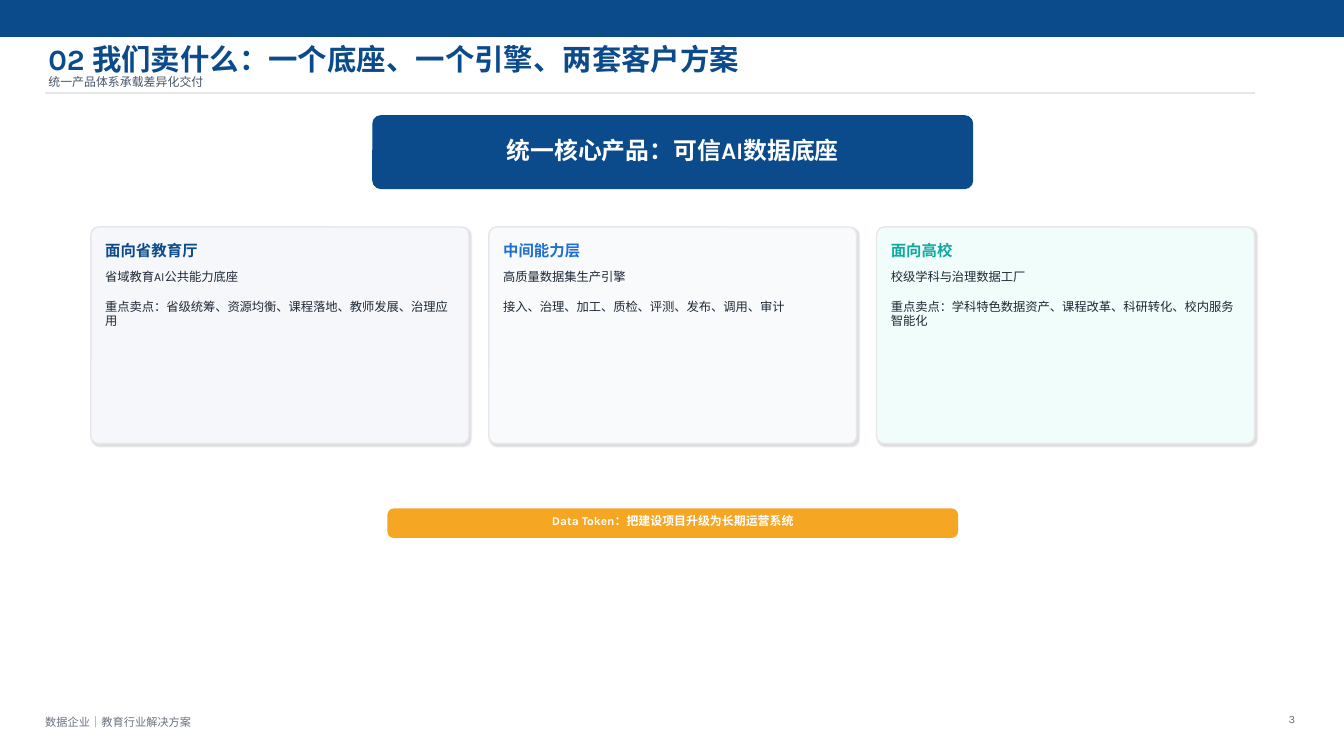
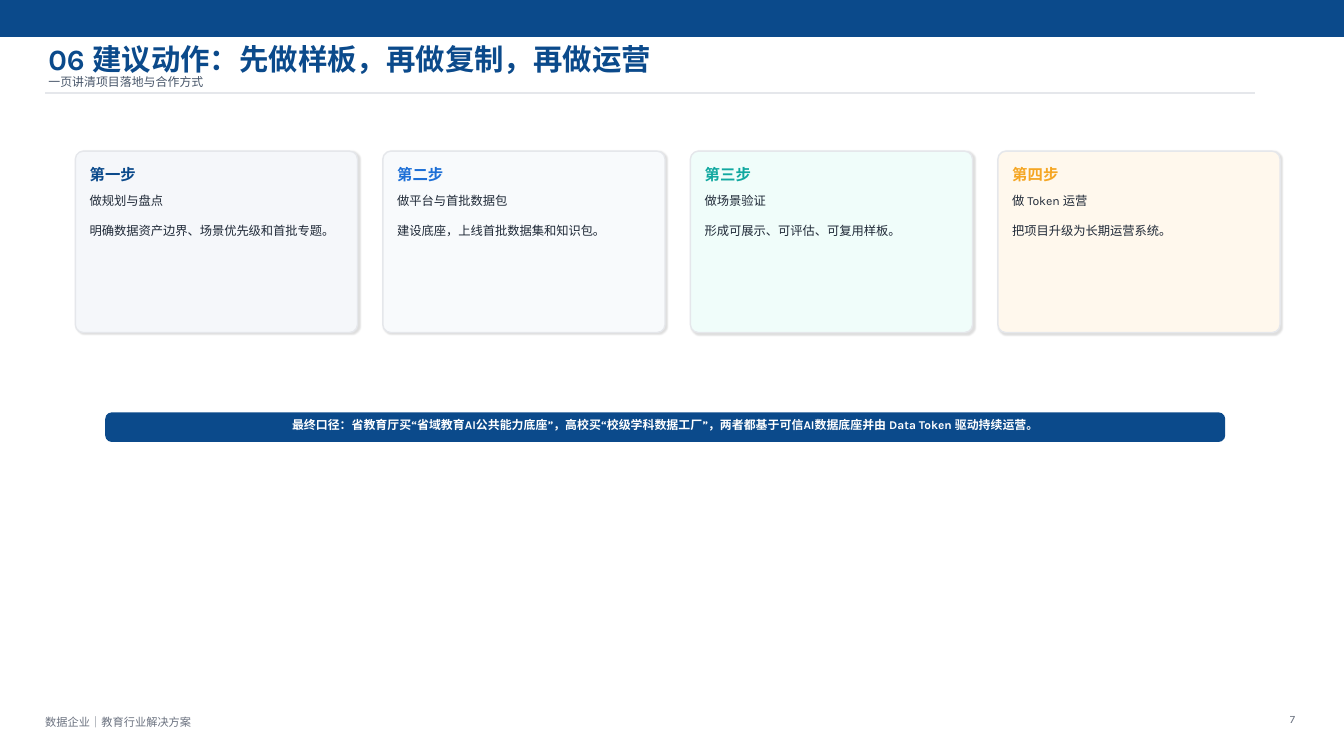
from dataclasses import dataclass

from lxml.etree import SubElement
from pptx import Presentation
from pptx.dml.color import RGBColor
from pptx.enum.shapes import MSO_CONNECTOR as Connector, MSO_SHAPE as Preset
from pptx.enum.text import MSO_ANCHOR as Anchor, MSO_AUTO_SIZE as AutoSize, PP_ALIGN as Align
from pptx.oxml.ns import qn
from pptx.util import Cm, Pt


@dataclass(frozen=True)
class Theme:
    font: str = "Karla"
    # Colours
    navy: str = "0B4A8B"
    blue: str = "1D6FD6"
    teal: str = "11A8A0"
    amber: str = "F5A623"
    white: str = "FFFFFF"
    ink: str = "1F2937"
    slate: str = "475569"
    grey: str = "6B7280"
    rule: str = "E5E7EB"
    mist: str = "F5F7FA"
    frost: str = "F8FAFC"
    mint: str = "F0FDFA"
    cream: str = "FFF8ED"
    # Type sizes in points
    title: float = 21
    hero: float = 17
    heading: float = 11
    body: float = 8.8
    caption: float = 8.5
    footer: float = 8


@dataclass(frozen=True)
class Box:
    """A region of the slide, in centimetres."""
    x: float
    y: float
    w: float
    h: float

    def lengths(self):
        return Cm(self.x), Cm(self.y), Cm(self.w), Cm(self.h)


T = Theme()
SLIDE = Box(0, 0, 33.87, 19.05)
FOOTER = "数据企业｜教育行业解决方案"


def rgb(value):
    return RGBColor.from_string(value)


def write(frame, paragraphs, size, color, bold=False, align=Align.LEFT,
          anchor=Anchor.MIDDLE, gap=0, lift=0):
    """Fill a text frame; gap separates paragraphs, lift raises the text."""
    frame.word_wrap = True
    frame.auto_size = AutoSize.NONE
    frame.vertical_anchor = anchor
    frame.margin_left = frame.margin_right = frame.margin_top = 0
    frame.margin_bottom = Cm(lift)
    for i, text in enumerate(paragraphs):
        para = frame.add_paragraph() if i else frame.paragraphs[0]
        para.alignment = align
        para.space_before = Pt(gap if i else 0)
        run = para.add_run()
        run.text = text
        font = run.font
        font.name, font.size, font.bold = T.font, Pt(size), bold
        font.color.rgb = rgb(color)
        SubElement(run._r.get_or_add_rPr(), qn("a:ea"), typeface=T.font)


def add_text(slide, box, *paragraphs, **style):
    write(slide.shapes.add_textbox(*box.lengths()).text_frame, paragraphs, **style)


def add_panel(slide, box, fill, line, radius=0):
    preset = Preset.ROUNDED_RECTANGLE if radius else Preset.RECTANGLE
    panel = slide.shapes.add_shape(preset, *box.lengths())
    if radius:
        panel.adjustments[0] = radius / box.h
    panel.fill.solid()
    panel.fill.fore_color.rgb = rgb(fill)
    panel.line.color.rgb = rgb(line)
    panel.line.width = Pt(1)
    panel.shadow.inherit = False
    return panel


def add_soft_shadow(panel):
    effects = panel._element.spPr.find(qn("a:effectLst"))
    shadow = SubElement(effects, qn("a:outerShdw"), blurRad=str(Pt(1.2)), dist=str(Pt(1.2)),
                        dir=str(45 * 60000), algn="bl", rotWithShape="0")
    black = SubElement(shadow, qn("a:srgbClr"), val="000000")
    SubElement(black, qn("a:alpha"), val="12000")


def add_banner(slide, box, text, fill, size, radius):
    banner = add_panel(slide, box, fill, fill, radius)
    write(banner.text_frame, [text], size, T.white, bold=True, align=Align.CENTER, lift=0.1)


def add_card(slide, box, heading, lines, accent, fill):
    add_soft_shadow(add_panel(slide, box, fill, T.rule, radius=0.2))
    pad, body_top = 0.36, 1.07
    left, width = box.x + pad, box.w - 2 * pad
    add_text(slide, Box(left, box.y + 0.3, width, 0.56), heading,
             size=T.heading, color=accent, bold=True)
    add_text(slide, Box(left, box.y + body_top, width, box.h - body_top - 0.25), *lines,
             size=T.body, color=T.ink, anchor=Anchor.TOP, gap=10.5)


def add_card_row(slide, x, y, h, gap, widths, cards):
    palette = [(T.navy, T.mist), (T.blue, T.frost), (T.teal, T.mint), (T.amber, T.cream)]
    for width, (heading, *lines), (accent, fill) in zip(widths, cards, palette):
        add_card(slide, Box(x, y, width, h), heading, lines, accent, fill)
        x += width + gap


def add_framed_slide(deck, title, subtitle, page):
    """Add a slide with the shared band, title, rule and footer."""
    slide = deck.slides.add_slide(deck.slide_layouts[5])
    add_panel(slide, Box(0, 0, SLIDE.w, 0.91), T.navy, T.navy)

    # Title and subtitle
    heading = slide.shapes.title
    heading.left, heading.top, heading.width, heading.height = Box(1.22, 1.07, 24.89, 0.81).lengths()
    write(heading.text_frame, [title], T.title, T.navy, bold=True)
    add_text(slide, Box(1.22, 1.83, 21.59, 0.46), subtitle, size=T.caption, color=T.slate)

    # Rule below the title
    rule = slide.shapes.add_connector(Connector.STRAIGHT, Cm(1.14), Cm(2.34), Cm(31.62), Cm(2.34))
    rule.line.color.rgb = rgb(T.rule)
    rule.line.width = Pt(1)
    SubElement(rule._element.spPr, qn("a:effectLst"))

    # Footer and page number
    add_text(slide, Box(1.14, 17.98, 9.65, 0.41), FOOTER, size=T.footer, color=T.grey)
    add_text(slide, Box(31.88, 17.91, 0.76, 0.41), page,
             size=T.footer, color=T.grey, align=Align.RIGHT)
    return slide


def add_offer_slide(deck):
    slide = add_framed_slide(deck, "02 我们卖什么：一个底座、一个引擎、两套客户方案",
                             "统一产品体系承载差异化交付", "3")
    add_banner(slide, Box(9.4, 2.92, 15.11, 1.83), "统一核心产品：可信AI数据底座",
               T.navy, T.hero, radius=0.2)
    add_card_row(slide, x=2.29, y=5.72, h=5.46, gap=0.5, widths=[9.53, 9.27, 9.53], cards=[
        ("面向省教育厅", "省域教育AI公共能力底座",
         "重点卖点：省级统筹、资源均衡、课程落地、教师发展、治理应用"),
        ("中间能力层", "高质量数据集生产引擎",
         "接入、治理、加工、质检、评测、发布、调用、审计"),
        ("面向高校", "校级学科与治理数据工厂",
         "重点卖点：学科特色数据资产、课程改革、科研转化、校内服务智能化"),
    ])
    add_banner(slide, Box(9.78, 12.83, 14.35, 0.71), "Data Token：把建设项目升级为长期运营系统",
               T.amber, T.caption, radius=0.15)


def add_action_slide(deck):
    slide = add_framed_slide(deck, "06 建议动作：先做样板，再做复制，再做运营",
                             "一页讲清项目落地与合作方式", "7")
    add_card_row(slide, x=1.9, y=3.81, h=4.57, gap=0.64, widths=[7.11] * 4, cards=[
        ("第一步", "做规划与盘点", "明确数据资产边界、场景优先级和首批专题。"),
        ("第二步", "做平台与首批数据包", "建设底座，上线首批数据集和知识包。"),
        ("第三步", "做场景验证", "形成可展示、可评估、可复用样板。"),
        ("第四步", "做 Token 运营", "把项目升级为长期运营系统。"),
    ])
    add_banner(slide, Box(2.67, 10.41, 28.19, 0.71),
               "最终口径：省教育厅买“省域教育AI公共能力底座”，高校买“校级学科数据工厂”，"
               "两者都基于可信AI数据底座并由 Data Token 驱动持续运营。",
               T.navy, T.caption, radius=0.15)


def main():
    deck = Presentation()
    deck.slide_width, deck.slide_height = Cm(SLIDE.w), Cm(SLIDE.h)
    add_offer_slide(deck)
    add_action_slide(deck)
    deck.save("out.pptx")


if __name__ == "__main__":
    main()
